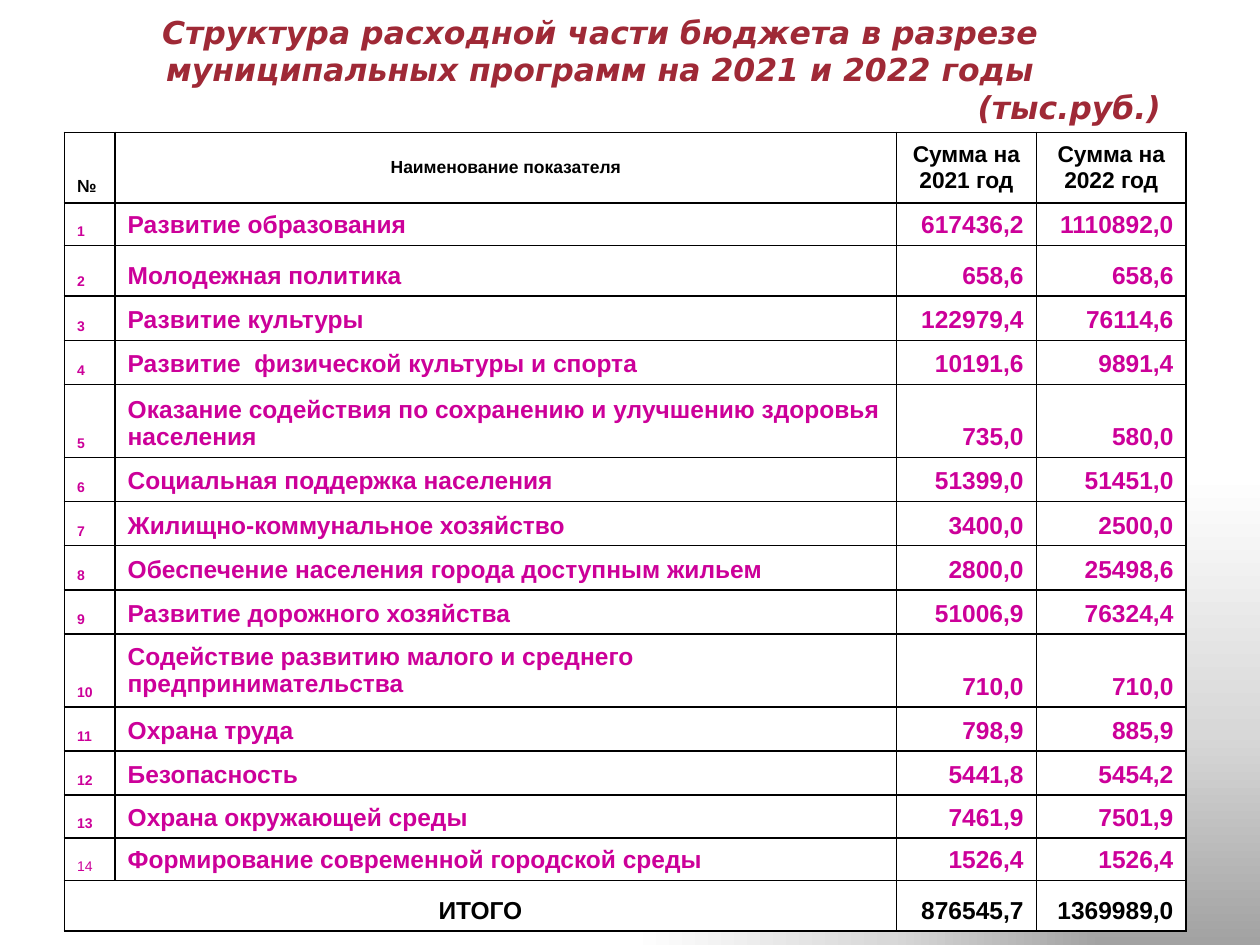
from lxml import etree
from pptx import Presentation
from pptx.dml.color import RGBColor
from pptx.enum.text import MSO_ANCHOR, MSO_AUTO_SIZE, PP_ALIGN
from pptx.oxml.ns import qn
from pptx.util import Cm, Pt

LEFT, CENTER, RIGHT = PP_ALIGN.LEFT, PP_ALIGN.CENTER, PP_ALIGN.RIGHT
MIDDLE, BOTTOM = MSO_ANCHOR.MIDDLE, MSO_ANCHOR.BOTTOM
NO_FIT = MSO_AUTO_SIZE.NONE

THEME = {
    "title": {"name": "DejaVu Sans", "size": Pt(18), "bold": True, "italic": True, "color": "9F2936"},
    "label": {"name": "Arial", "size": Pt(10), "bold": True, "color": "000000"},
    "year": {"name": "Arial", "size": Pt(13), "bold": True, "color": "000000"},
    "number": {"name": "Arial", "size": Pt(8), "bold": True, "color": "CC0099"},
    "last_number": {"name": "Arial", "size": Pt(8), "bold": False, "color": "CC0099"},
    "entry": {"name": "Arial", "size": Pt(14), "bold": True, "color": "CC0099"},
    "total": {"name": "Arial", "size": Pt(14), "bold": True, "color": "000000"},
    "cell": "FFFFFF",
    "border": "000000",
    "backdrop": [(0, "A2A2A2"), (45000, "D8D8D8"), (100000, "FFFFFF")],
}

PROGRAMS = [
    ("Развитие образования", "617436,2", "1110892,0"),
    ("Молодежная политика", "658,6", "658,6"),
    ("Развитие культуры", "122979,4", "76114,6"),
    ("Развитие  физической культуры и спорта", "10191,6", "9891,4"),
    ("Оказание содействия по сохранению и улучшению здоровья населения", "735,0", "580,0"),
    ("Социальная поддержка населения", "51399,0", "51451,0"),
    ("Жилищно-коммунальное хозяйство", "3400,0", "2500,0"),
    ("Обеспечение населения города доступным жильем", "2800,0", "25498,6"),
    ("Развитие дорожного хозяйства", "51006,9", "76324,4"),
    ("Содействие развитию малого и среднего предпринимательства", "710,0", "710,0"),
    ("Охрана труда", "798,9", "885,9"),
    ("Безопасность", "5441,8", "5454,2"),
    ("Охрана окружающей среды", "7461,9", "7501,9"),
    ("Формирование современной городской среды", "1526,4", "1526,4"),
]
HEADER = ("№", "Наименование показателя", "Сумма на 2021 год", "Сумма на 2022 год")
TOTAL = ("ИТОГО", "", "876545,7", "1369989,0")
ROWS = [HEADER, *((str(n), *program) for n, program in enumerate(PROGRAMS, 1)), TOTAL]
LAST = len(ROWS) - 1

COL_WIDTHS = [1.02, 15.75, 2.82, 3.02]
ROW_HEIGHT = 0.89
ROW_HEIGHTS = {0: 1.42, 1: 0.86, 2: 1.02, 5: 1.47, 10: 1.47, 13: 0.86, 14: 0.86, LAST: 1.02}
WRAPPED = {(0, 2), (0, 3), (5, 1), (10, 1)}
CENTERED = {(0, 1), (0, 2), (0, 3), (LAST, 0)}
MIDDLED = {(0, 1), (0, 2), (0, 3), (10, 1)}
STYLES = {
    0: ["label", "label", "year", "year"],
    LAST - 1: ["last_number", "entry", "entry", "entry"],
    LAST: ["total"] * 4,
}


def write(p, text, style, align):
    p.alignment = align
    r = p.add_run()
    r.text = text
    for key, value in THEME[style].items():
        if key == "color":
            r.font.color.rgb = RGBColor.from_string(value)
        else:
            setattr(r.font, key, value)


def add_color(parent, value):
    etree.SubElement(parent, qn("a:srgbClr"), val=value)


prs = Presentation()
prs.slide_width, prs.slide_height = Cm(25.4), Cm(19.05)
s = prs.slides.add_slide(prs.slide_layouts[5])

s.background.fill.gradient()
grad = s.element.find(".//" + qn("a:gradFill"))
for child in list(grad):
    grad.remove(child)
stops = etree.SubElement(grad, qn("a:gsLst"))
for pos, color in THEME["backdrop"]:
    add_color(etree.SubElement(stops, qn("a:gs"), pos=str(pos)), color)
shade = etree.SubElement(grad, qn("a:path"), path="rect")
etree.SubElement(shade, qn("a:fillToRect"), l="100000", t="100000")

sp = s.shapes.title
sp.left, sp.top, sp.width, sp.height = Cm(0.3), Cm(1.12), Cm(23.6), Cm(1.55)
tf = sp.text_frame
for key, value in {
    "auto_size": NO_FIT,
    "word_wrap": True,
    "vertical_anchor": BOTTOM,
    "margin_left": Cm(0.5),
    "margin_right": Cm(0.5),
}.items():
    setattr(tf, key, value)
write(
    tf.paragraphs[0],
    "Структура расходной части бюджета в разрезе муниципальных программ на 2021 и 2022 годы",
    "title",
    CENTER,
)
write(tf.add_paragraph(), "(тыс.руб.)", "title", RIGHT)

heights = [ROW_HEIGHTS.get(i, ROW_HEIGHT) for i in range(len(ROWS))]
table = s.shapes.add_table(
    len(ROWS), len(HEADER), Cm(1.3), Cm(2.67), Cm(sum(COL_WIDTHS)), Cm(sum(heights))
).table
table.first_row = table.horz_banding = False
for col, width in zip(table.columns, COL_WIDTHS):
    col.width = Cm(width)
for row, height in zip(table.rows, heights):
    row.height = Cm(height)
table.cell(LAST, 0).merge(table.cell(LAST, 1))

for i, values in enumerate(ROWS):
    styles = STYLES.get(i, ["number", "entry", "entry", "entry"])
    for j, text in enumerate(values):
        cell = table.cell(i, j)
        cell.fill.solid()
        cell.fill.fore_color.rgb = RGBColor.from_string(THEME["cell"])
        cell.vertical_anchor = MIDDLE if (i, j) in MIDDLED else BOTTOM
        tc_pr = cell._tc.get_or_add_tcPr()
        for k, side in enumerate(("lnL", "lnR", "lnT", "lnB")):
            ln = etree.Element(qn("a:" + side), w=str(Pt(1)))
            add_color(etree.SubElement(ln, qn("a:solidFill")), THEME["border"])
            tc_pr.insert(k, ln)
        if not text:
            continue
        p = cell.text_frame.paragraphs[0]
        align = CENTER if (i, j) in CENTERED else RIGHT if j > 1 else LEFT
        write(p, text, styles[j], align)
        if (i, j) not in WRAPPED:
            p_pr = p._p.get_or_add_pPr()
            p_pr.set("marL", str(Cm(0.74)))
            p_pr.set("indent", str(-Cm(0.74)))

prs.save("out.pptx")
